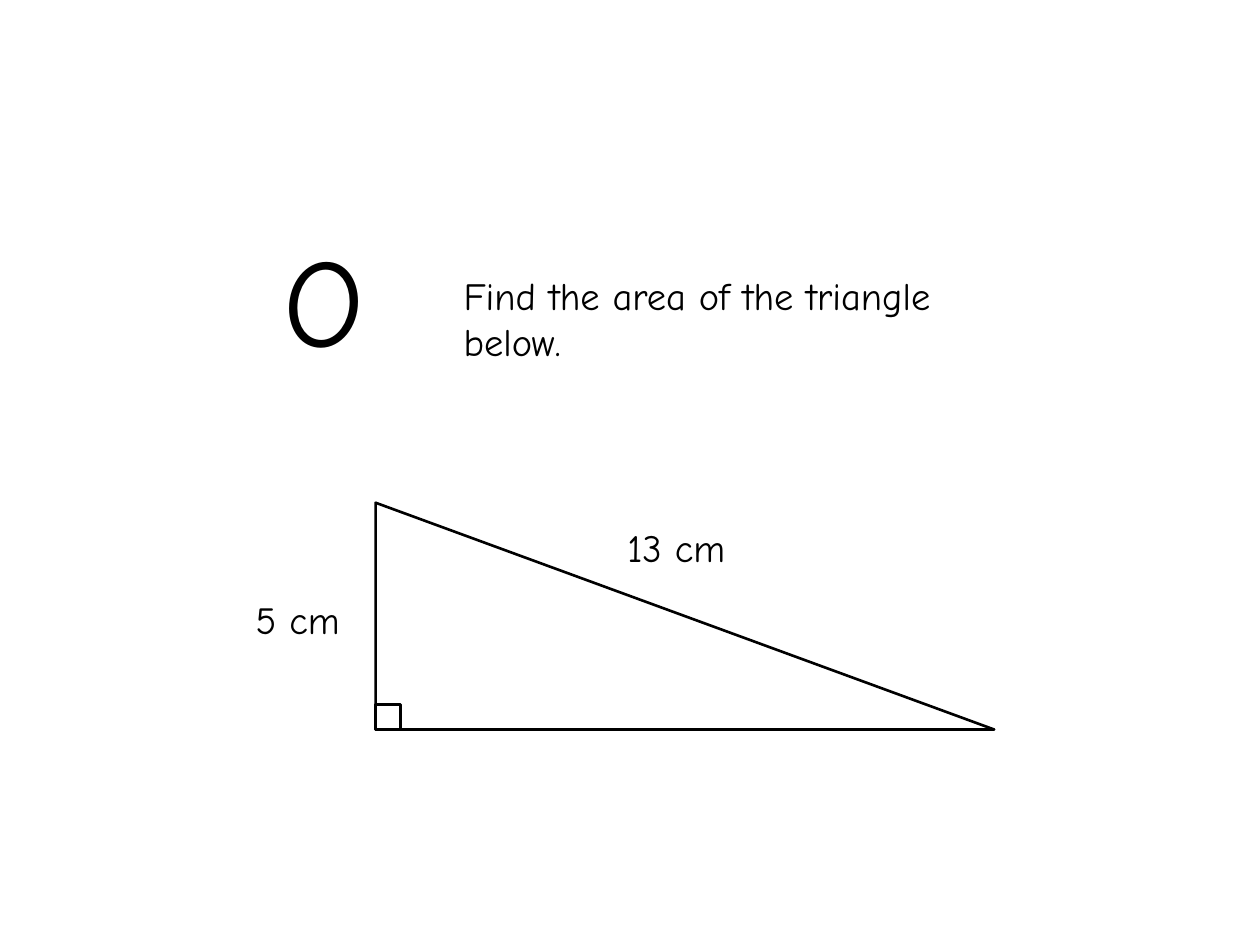
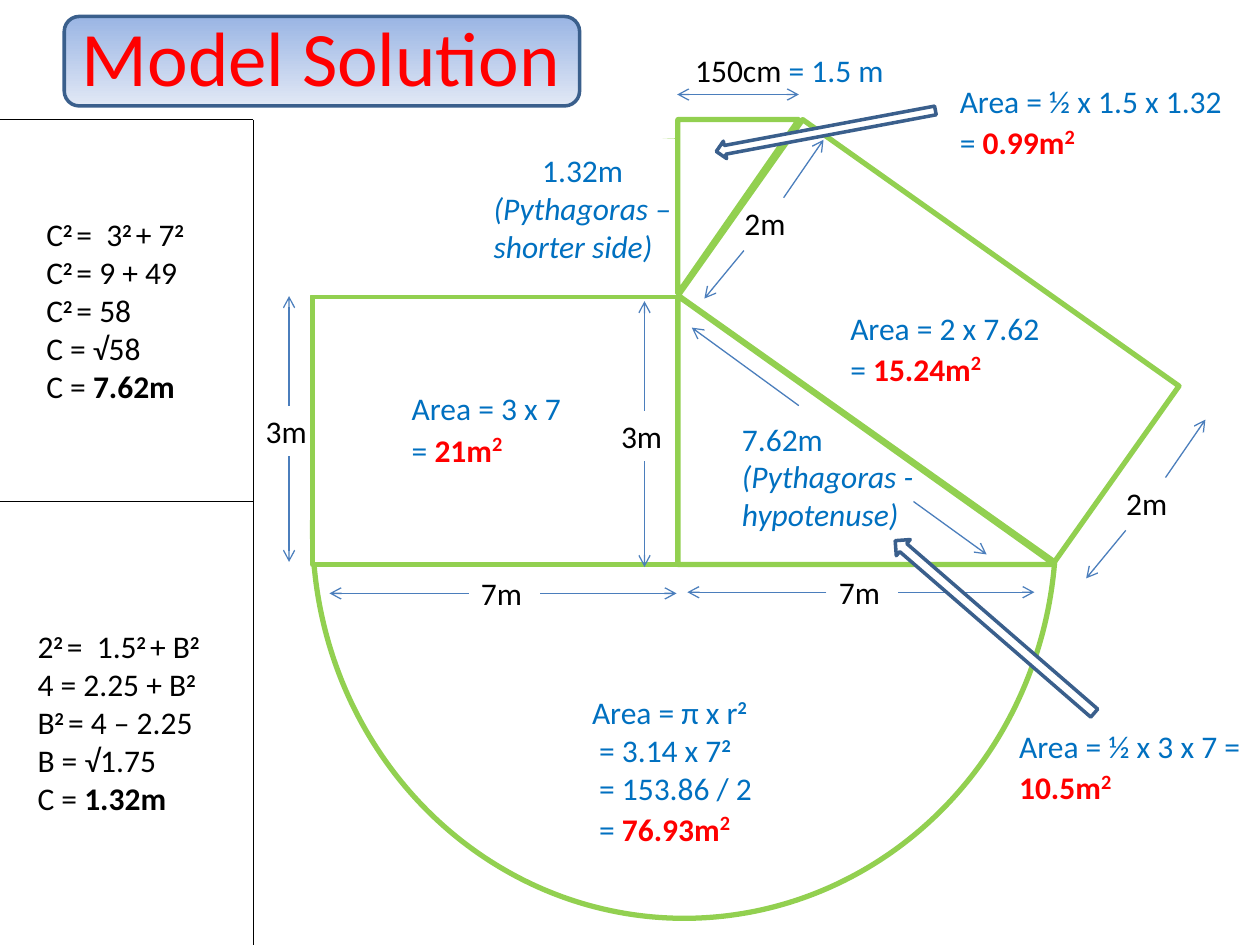
"""Build a triangle area question and the model solution of a compound area problem."""
import pptx
import pptx.dml.color
import pptx.enum.shapes
import pptx.enum.text
import pptx.oxml.ns
import pptx.util
from lxml import etree

Pt = pptx.util.Pt
RGBColor = pptx.dml.color.RGBColor
SHAPE = pptx.enum.shapes.MSO_SHAPE
ALIGN = pptx.enum.text.PP_ALIGN
qn = pptx.oxml.ns.qn

BLACK = RGBColor(0x00, 0x00, 0x00)
WHITE = RGBColor(0xFF, 0xFF, 0xFF)
RED = RGBColor(0xFF, 0x00, 0x00)
BLUE = RGBColor(0x00, 0x70, 0xC0)
GREEN = RGBColor(0x92, 0xD0, 0x50)
NAVY = RGBColor(0x3A, 0x5F, 0x8C)
ARROW_BLUE = RGBColor(0x4B, 0x7E, 0xBC)
BANNER_TOP = RGBColor(0x9A, 0xB5, 0xE4)
BANNER_BOTTOM = RGBColor(0xE1, 0xE8, 0xF5)
QUESTION_FONT = "Comic Neue"
SOLUTION_FONT = "Calibri"


def add_text(slide, text, box, font=SOLUTION_FONT, size=18, color=BLACK,
             mark_color=BLACK, mark_bold=True, mark_power_size=20):
    """Add a text box; *...* marks a result and ^...^ a superscript."""
    frame = slide.shapes.add_textbox(*map(Pt, box)).text_frame
    frame.word_wrap = True
    for number, line in enumerate(text.split("\n")):
        paragraph = frame.paragraphs[0] if number == 0 else frame.add_paragraph()
        for mark_index, part in enumerate(line.split("*")):
            marked = mark_index % 2 == 1
            for power_index, piece in enumerate(part.split("^")):
                if not piece:
                    continue
                raised = power_index % 2 == 1
                run = paragraph.add_run()
                run.text = piece
                run.font.name = font
                run.font.size = Pt(mark_power_size if marked and raised else size)
                run.font.bold = mark_bold if marked else raised
                run.font.color.rgb = mark_color if marked else color
                if raised:
                    run.font._element.set("baseline", "30000")
    return frame


def add_outline(slide, kind, box, line_color, line_width, fill_color=None, rotation=0):
    """Add a preset shape with a plain outline."""
    shape = slide.shapes.add_shape(kind, *map(Pt, box))
    shape.shadow.inherit = False
    shape.rotation = rotation
    shape.line.color.rgb = line_color
    shape.line.width = Pt(line_width)
    if fill_color is None:
        shape.fill.background()
    else:
        shape.fill.solid()
        shape.fill.fore_color.rgb = fill_color
    return shape


presentation = pptx.Presentation()
presentation.slide_width = Pt(720)
presentation.slide_height = Pt(540)

question = presentation.slides.add_slide(presentation.slide_layouts[6])
add_text(question, "O", (154.8, 123.1, 87.1, 155.5), font=QUESTION_FONT, size=72)
for text, box in [
    ("Find the area of the triangle below.", (257.8, 151.9, 323.3, 123.1)),
    ("13 cm", (351.4, 295.9, 96.5, 43.9)),
    ("5 cm", (139, 337, 73.4, 43.9)),
]:
    add_text(question, text, box, font=QUESTION_FONT, size=22)
add_outline(question, SHAPE.RIGHT_TRIANGLE, (214.6, 287.3, 353.5, 129.6), BLACK, 1.5)
add_outline(question, SHAPE.RECTANGLE, (214.6, 402.5, 14.4, 14.4), BLACK, 1.5)

solution = presentation.slides.add_slide(presentation.slide_layouts[5])
banner = add_outline(solution, SHAPE.FLOWCHART_ALTERNATE_PROCESS,
                     (36.7, 9.4, 294.5, 51.1), NAVY, 2)
banner.fill.gradient()
banner.fill.gradient_angle = 270
for stop, color in zip(banner.fill.gradient_stops, (BANNER_TOP, BANNER_BOTTOM)):
    stop.color.rgb = color
solution.shapes._spTree.insert(2, banner._element)

title = solution.shapes.title
title.left, title.top, title.width, title.height = map(Pt, (-140.4, -13, 648, 90))
title.text_frame.text = "Model Solution"
title.text_frame.vertical_anchor = pptx.enum.text.MSO_ANCHOR.MIDDLE
title_paragraph = title.text_frame.paragraphs[0]
title_paragraph.alignment = ALIGN.CENTER
title_paragraph.font.name = SOLUTION_FONT
title_paragraph.font.size = Pt(44)
title_paragraph.font.color.rgb = RED

for kind, box, rotation, line_color, line_width in [
    (SHAPE.OVAL, (178.6, 80.6, 424.8, 444.2), 0, GREEN, 3),
    (SHAPE.RECTANGLE, (178.6, 169.2, 208.8, 153.4), 0, GREEN, 3),
    (SHAPE.RIGHT_TRIANGLE, (387.4, 169.2, 215.3, 153.4), 0, GREEN, 3),
    (SHAPE.RECTANGLE, (398.9, 133.2, 263.5, 123.1), 35.3, GREEN, 3),
    (SHAPE.RECTANGLE, (154.8, 80.6, 231.8, 87.1), 0, WHITE, 2),
    (SHAPE.RIGHT_TRIANGLE, (372.2, 83.5, 99.4, 69.1), 90, GREEN, 3),
]:
    add_outline(solution, kind, box, line_color, line_width, WHITE, rotation)

lines = [
    ((387, 54), (456.5, 54), ARROW_BLUE, ("headEnd", "tailEnd")),
    ((456.5, 231.8), (395.3, 187.2), ARROW_BLUE, ("tailEnd",)),
    ((522, 286.6), (563.8, 316.8), ARROW_BLUE, ("tailEnd",)),
    ((144.7, 68.4), (144.7, 540), BLACK, ()),
    ((144.7, 286.6), (0, 286.6), BLACK, ()),
    ((144.7, 68.4), (0, 68.4), BLACK, ()),
]
dimension_arrows = {
    "7m": [((41, 14.4), (118.8, 14.4)), ((0, 14.4), (-79.5, 14.4))],
    "3m": [((20.5, 0), (20.5, -62.6)), ((20.5, 28.8), (20.5, 89.3))],
    "2m": [((29.5, 0), (52.3, -33.1)), ((6.8, 30.2), (-15.8, 57.6))],
}
for label, left, top in [
    ("7m", 267.8, 324.7), ("7m", 472.3, 324),
    ("3m", 144.7, 231.8), ("3m", 347.8, 234.7),
    ("2m", 636.5, 272.9), ("2m", 418.3, 113),
]:
    add_text(solution, label, (left, top, 41, 28.8))
    for start, end in dimension_arrows[label]:
        lines.append(((left + start[0], top + start[1]),
                      (left + end[0], top + end[1]), ARROW_BLUE, ("tailEnd",)))

for start, end, color, arrowheads in lines:
    connector = solution.shapes.add_connector(
        pptx.enum.shapes.MSO_CONNECTOR.STRAIGHT, *map(Pt, start + end))
    connector.line.color.rgb = color
    connector.line.width = Pt(0.75)
    properties = connector._element.spPr
    for arrowhead in arrowheads:
        etree.SubElement(properties.find(qn("a:ln")), qn("a:" + arrowhead), type="arrow")
    etree.SubElement(properties, qn("a:effectLst"))

for box, rotation in [
    ((408.2, 69.8, 127.4, 10.1), 169.4),
    ((493.2, 352.1, 150.5, 12.2), 220.9),
]:
    add_outline(solution, SHAPE.RIGHT_ARROW, box, NAVY, 2, WHITE, rotation)

add_text(solution, "150cm *= 1.5 m*", (390.2, 25.9, 151.2, 28.8),
         mark_color=BLUE, mark_bold=False)
for text, box in [
    ("Area = 3 x 7 = *21m^2^*", (228.2, 218.9, 109.4, 51.1)),
    ("Area = 2 x 7.62 = *15.24m^2^*", (478.8, 172.8, 124.6, 51.8)),
    ("Area = ½ x 1.5 x 1.32 = *0.99m^2^*", (541.4, 43.2, 165.6, 51.1)),
    ("Area = ½ x 3 x 7 = *10.5m^2^*", (575.3, 411.8, 141.8, 51.1)),
    ("Area = π x r^2^\n = 3.14 x 7^2^\n = 153.86 / 2\n = *76.93m^2^*",
     (331.2, 392.4, 142.6, 147.6)),
]:
    add_text(solution, text, box, color=BLUE, mark_color=RED)

hypotenuse = add_text(solution, "7.62m\n(Pythagoras - hypotenuse)",
                      (416.9, 236.2, 118.8, 72.7), color=BLUE)
shorter_side = add_text(solution, "1.32m\n(Pythagoras – shorter side)",
                        (275, 82.8, 115.9, 72.7), color=BLUE)
shorter_side.paragraphs[0].alignment = ALIGN.CENTER
for frame in (hypotenuse, shorter_side):
    frame.paragraphs[1].runs[0].font.italic = True

add_text(solution,
         "C^2 ^=  3^2 ^+ 7^2^\nC^2 ^= 9 + 49\nC^2 ^= 58\nC = √58\nC = *7.62m*",
         (19.4, 119.5, 108, 116.6))
add_text(solution,
         "2^2 ^=  1.5^2 ^+ B^2^\n4 = 2.25 + B^2^\nB^2 ^= 4 – 2.25\nB = √1.75\nC = *1.32m*",
         (14.4, 355, 125.3, 116.6))

presentation.save("out.pptx")
